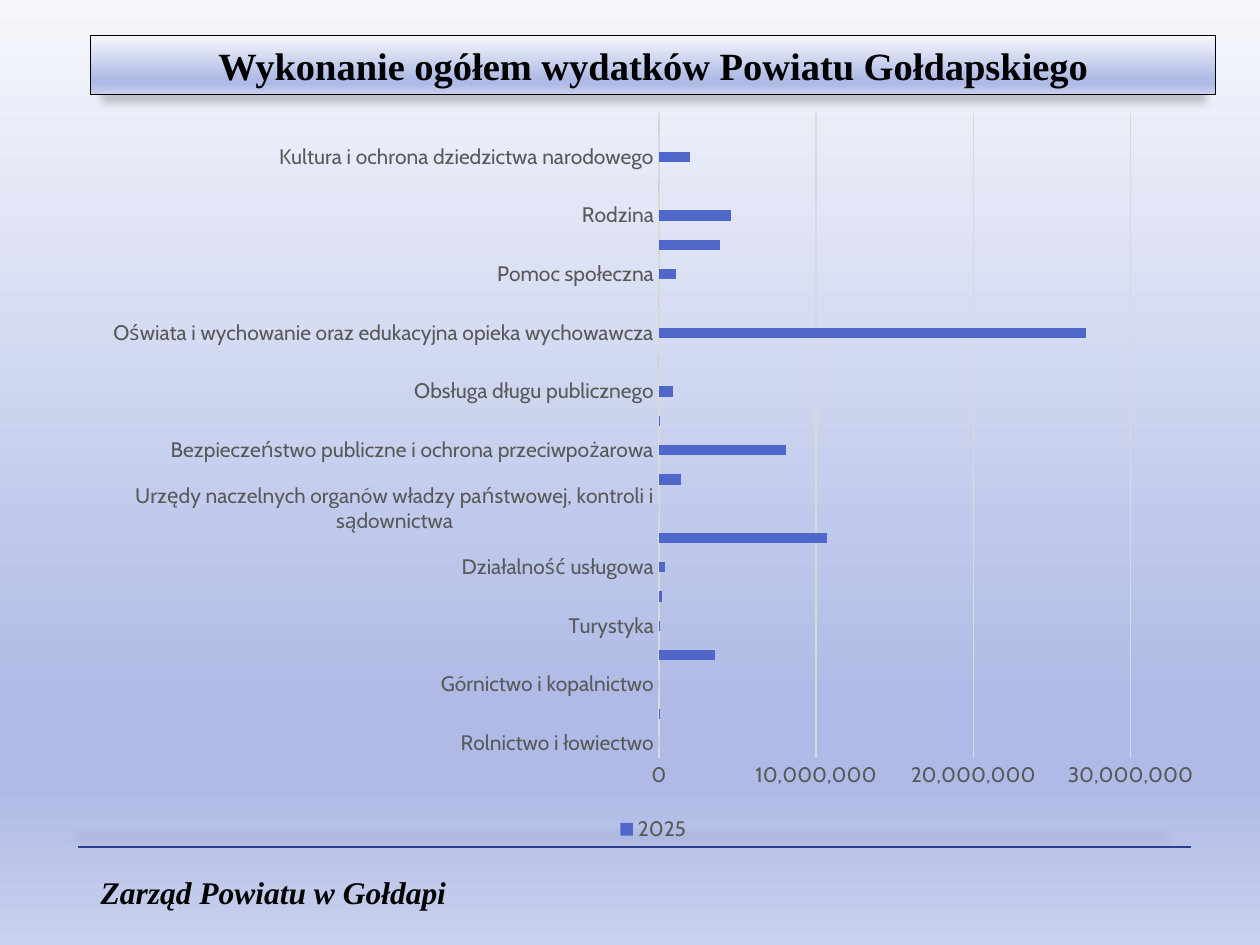
from dataclasses import dataclass

from lxml.etree import SubElement
from pptx import Presentation
from pptx.chart.data import CategoryChartData
from pptx.dml.color import RGBColor
from pptx.enum.chart import XL_CHART_TYPE, XL_LEGEND_POSITION, XL_TICK_MARK
from pptx.enum.shapes import MSO_CONNECTOR, MSO_SHAPE
from pptx.enum.text import MSO_ANCHOR, PP_ALIGN
from pptx.oxml.ns import qn
from pptx.util import Cm, Pt


@dataclass(frozen=True)
class Theme:
    ink: str = "000000"
    label: str = "595959"
    grid: str = "D9D9D9"
    bar: str = "4E67C8"
    rule: str = "2A3E8E"
    wash: tuple = ((0, "F6F7FC"), (74, "AFBBE6"), (83, "AFBBE6"), (100, "CAD1EE"))
    serif: str = "Times New Roman"
    sans: str = "Cabin"
    title: int = 22
    foot: int = 18
    small: int = 12


@dataclass(frozen=True)
class Box:
    """Place and size in centimetres."""
    x: float
    y: float
    w: float
    h: float

    def frame(self):
        return Cm(self.x), Cm(self.y), Cm(self.w), Cm(self.h)


THEME = Theme()

SPEND = [
    ("Rolnictwo i łowiectwo", 0),
    ("Leśnictwo", 100000),
    ("Górnictwo i kopalnictwo", 0),
    ("Transport i łączność", 3600000),
    ("Turystyka", 100000),
    ("Gospodarka mieszkaniowa", 200000),
    ("Działalność usługowa", 400000),
    ("Administracja publiczna", 10700000),
    ("Urzędy naczelnych organów władzy państwowej, kontroli i sądownictwa", 0),
    ("Obrona narodowa", 1400000),
    ("Bezpieczeństwo publiczne i ochrona przeciwpożarowa", 8100000),
    ("Wymiar sprawiedliwości", 100000),
    ("Obsługa długu publicznego", 900000),
    ("Różne rozliczenia", 0),
    ("Oświata i wychowanie oraz edukacyjna opieka wychowawcza", 27200000),
    ("Ochrona zdrowia", 0),
    ("Pomoc społeczna", 1100000),
    ("Pozostałe zadania w zakresie polityki społecznej", 3900000),
    ("Rodzina", 4600000),
    ("Gospodarka komunalna i ochrona dziedzictwa narodowego", 0),
    ("Kultura i ochrona dziedzictwa narodowego", 2000000),
    ("Kultura fizyczna", 0),
]


def color(code):
    return RGBColor.from_string(code)


def style(font, name, size, tone, bold=False, slant=False):
    font.name, font.size = name, Pt(size)
    font.bold, font.italic = bold, slant
    font.color.rgb = color(tone)


def write(shape, text, align=PP_ALIGN.LEFT, **form):
    frame = shape.text_frame
    frame.word_wrap = True
    frame.vertical_anchor = MSO_ANCHOR.MIDDLE
    para = frame.paragraphs[0]
    para.alignment = align
    run = para.add_run()
    run.text = text
    style(run.font, **form)


def wash(fill, root):
    """Lay the theme gradient, top to bottom, on a fill found under root."""
    fill.gradient()
    fill.gradient_angle = 270
    stops = next(root.iter(qn("a:gsLst")))
    for old in list(stops):
        stops.remove(old)
    for pos, code in THEME.wash:
        stop = SubElement(stops, qn("a:gs"), pos=str(pos * 1000))
        SubElement(stop, qn("a:srgbClr"), val=code)


def stroke(line, code, width):
    line.color.rgb = color(code)
    line.width = Pt(width)


def shade(shape):
    """Give a soft shadow below the shape."""
    props = shape.element.spPr
    for old in props.findall(qn("a:effectLst")):
        props.remove(old)
    drop = SubElement(
        SubElement(props, qn("a:effectLst")), qn("a:outerShdw"),
        blurRad=str(Pt(5)), dist=str(Pt(4)), dir="5400000",
        sx="98000", sy="98000", rotWithShape="0")
    tone = SubElement(drop, qn("a:srgbClr"), val=THEME.ink)
    SubElement(tone, qn("a:alpha"), val="20000")


def add_title(slide, box):
    panel = slide.shapes.add_shape(MSO_SHAPE.RECTANGLE, *box.frame())
    wash(panel.fill, panel.element)
    stroke(panel.line, THEME.ink, 0.75)
    shade(panel)
    write(panel, "Wykonanie ogółem wydatków Powiatu Gołdapskiego",
          PP_ALIGN.CENTER, name=THEME.serif, size=THEME.title,
          tone=THEME.ink, bold=True)


def add_foot(slide, box):
    rule = slide.shapes.add_connector(
        MSO_CONNECTOR.STRAIGHT, Cm(box.x), Cm(box.y),
        Cm(box.x + box.w), Cm(box.y))
    stroke(rule.line, THEME.rule, 1.25)
    shade(rule)
    area = Box(box.x + 0.21, box.y + 0.41, 10.31, box.h - 0.41)
    note = slide.shapes.add_textbox(*area.frame())
    write(note, "Zarząd Powiatu w Gołdapi", name=THEME.serif,
          size=THEME.foot, tone=THEME.ink, bold=True, slant=True)


def add_spend(slide, box):
    data = CategoryChartData(number_format="#,##0")
    data.categories = [name for name, _ in SPEND]
    data.add_series("2025", [value for _, value in SPEND])
    chart = slide.shapes.add_chart(
        XL_CHART_TYPE.BAR_CLUSTERED, *box.frame(), data).chart
    style(chart.font, THEME.sans, THEME.small, THEME.label)
    chart.has_title = False
    chart.has_legend = True
    chart.legend.position = XL_LEGEND_POSITION.BOTTOM
    chart.legend.include_in_layout = False

    plot = chart.plots[0]
    plot.gap_width = 182
    plot.vary_by_categories = False
    bars = plot.series[0].format.fill
    bars.solid()
    bars.fore_color.rgb = color(THEME.bar)

    names, scale = chart.category_axis, chart.value_axis
    for axis in (names, scale):
        axis.major_tick_mark = axis.minor_tick_mark = XL_TICK_MARK.NONE
    for part in (chart.legend, names.tick_labels, scale.tick_labels):
        style(part.font, THEME.sans, THEME.small, THEME.label)
    stroke(names.format.line, THEME.grid, 0.75)
    scale.format.line.fill.background()
    scale.minimum_scale, scale.maximum_scale = 0, 30000000
    scale.major_unit = 10000000
    scale.has_major_gridlines = True
    stroke(scale.major_gridlines.format.line, THEME.grid, 0.75)
    scale.tick_labels.number_format = "#,##0"
    scale.tick_labels.number_format_is_linked = False


def main():
    deck = Presentation()
    deck.slide_width, deck.slide_height = Cm(25.4), Cm(19.05)
    slide = deck.slides.add_slide(deck.slide_layouts[6])
    wash(slide.background.fill, slide.element)
    add_foot(slide, Box(1.57, 17.07, 22.43, 1.43))
    add_title(slide, Box(1.83, 0.71, 22.68, 1.19))
    add_spend(slide, Box(1.83, 1.98, 22.68, 15.09))
    deck.save("out.pptx")


if __name__ == "__main__":
    main()
